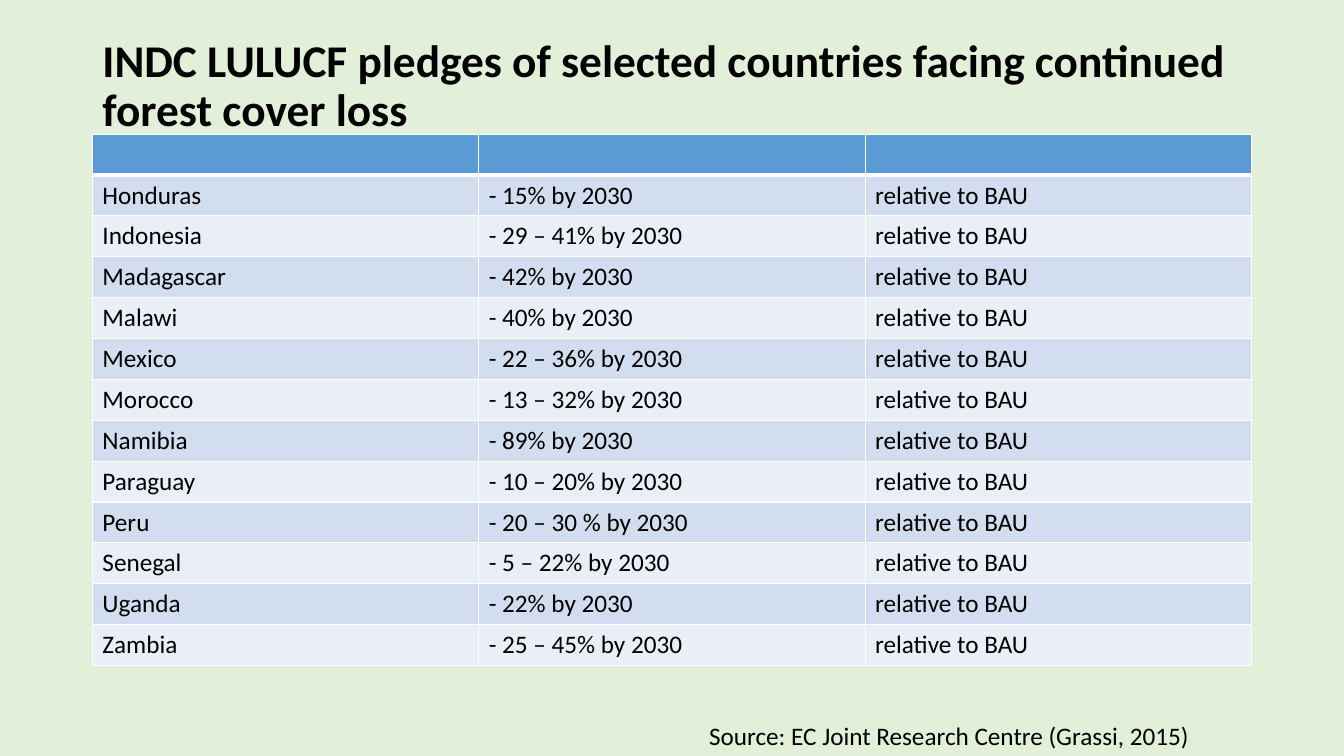
"""Builds a slide with a table of national forest and land-use pledges."""
from pptx import Presentation
from pptx.dml.color import RGBColor
from pptx.enum.text import MSO_ANCHOR, MSO_AUTO_SIZE, PP_ALIGN
from pptx.oxml import parse_xml
from pptx.oxml.ns import nsdecls
from pptx.util import Pt

BACKGROUND = RGBColor(0xE2, 0xF0, 0xD9)
HEADER = RGBColor(0x5B, 0x9B, 0xD5)
BANDS = [RGBColor(0xEA, 0xEF, 0xF7), RGBColor(0xD2, 0xDE, 0xEF)]
BORDER = RGBColor(0xFF, 0xFF, 0xFF)
BLACK = RGBColor(0, 0, 0)
LEFT, WIDTH = Pt(66), Pt(828)
ROW_HEIGHT = Pt(29.2)

PLEDGES = [
    ("Honduras", "- 15% by 2030"),
    ("Indonesia", "- 29 – 41% by 2030"),
    ("Madagascar", "- 42% by 2030"),
    ("Malawi", "- 40% by 2030"),
    ("Mexico", "- 22 – 36% by 2030"),
    ("Morocco", "- 13 – 32% by 2030"),
    ("Namibia", "- 89% by 2030"),
    ("Paraguay", "- 10 – 20% by 2030"),
    ("Peru", "- 20 – 30 % by 2030"),
    ("Senegal", "- 5 – 22% by 2030"),
    ("Uganda", "- 22% by 2030"),
    ("Zambia", "- 25 – 45% by 2030"),
]


def style_text(paragraph, size, bold=False):
    font = paragraph.font
    font.name, font.size, font.bold = "Calibri", Pt(size), bold
    font.color.rgb = BLACK


def add_border(cell, side, width):
    cell._tc.get_or_add_tcPr().append(parse_xml(
        f'<a:{side} {nsdecls("a")} w="{Pt(width)}"><a:solidFill>'
        f'<a:srgbClr val="{BORDER}"/></a:solidFill></a:{side}>'))


prs = Presentation()
prs.slide_width, prs.slide_height = Pt(960), Pt(540)
slide = prs.slides.add_slide(prs.slide_layouts[5])
slide.background.fill.solid()
slide.background.fill.fore_color.rgb = BACKGROUND

title = slide.shapes.title
title.left, title.top, title.width, title.height = LEFT, Pt(28.8), WIDTH, Pt(67)
title.text_frame.text = "INDC LULUCF pledges of selected countries facing continued forest cover loss"
title.text_frame.auto_size = MSO_AUTO_SIZE.NONE
title.text_frame.vertical_anchor = MSO_ANCHOR.MIDDLE
headline = title.text_frame.paragraphs[0]
headline.alignment = PP_ALIGN.LEFT
headline.line_spacing = 0.9
style_text(headline, 32.4, bold=True)

rows = [("", "", "")] + [(country, cut, "relative to BAU") for country, cut in PLEDGES]
pledges = slide.shapes.add_table(
    len(rows), 3, LEFT, Pt(95.8), WIDTH, ROW_HEIGHT * len(rows)).table
for r, values in enumerate(rows):
    pledges.rows[r].height = ROW_HEIGHT
    for c, value in enumerate(values):
        cell = pledges.cell(r, c)
        cell.text = value
        style_text(cell.text_frame.paragraphs[0], 18)
        for side in ("lnL", "lnR", "lnT", "lnB"):
            under_header = (r, side) in ((0, "lnB"), (1, "lnT"))
            add_border(cell, side, 3 if under_header else 1)
        cell.fill.solid()
        cell.fill.fore_color.rgb = BANDS[r % 2] if r else HEADER

source = slide.shapes.add_textbox(Pt(499.4), Pt(511), Pt(394.6), Pt(29)).text_frame
source.word_wrap = True
source.text = "Source: EC Joint Research Centre (Grassi, 2015)"
style_text(source.paragraphs[0], 18)

prs.save("out.pptx")
